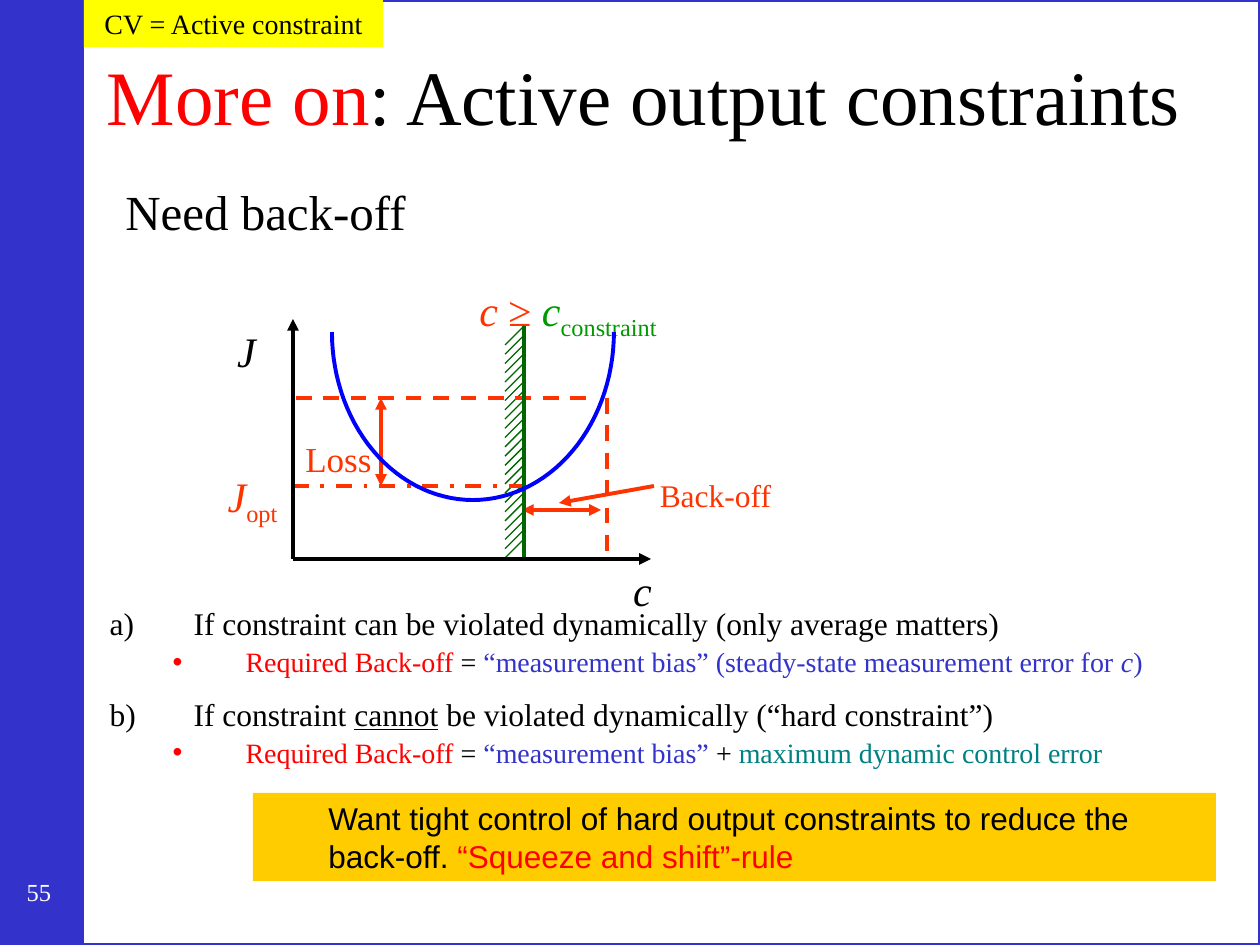
import math

import pptx
import pptx.dml.color
import pptx.enum.dml
import pptx.enum.shapes
import pptx.enum.text
import pptx.oxml.ns
import pptx.util
from lxml import etree

PX = 914400 / 126
SERIF = "Times New Roman"
ORANGE, BLACK, RED, BLUE = "FF3300", "000000", "FF0000", "3333CC"
DARK_GREEN, GREEN, TEAL, CURVE_BLUE = "006600", "009900", "008080", "0000FF"
CENTER = pptx.enum.text.PP_ALIGN.CENTER
LEFT = pptx.enum.text.PP_ALIGN.LEFT
DASH = pptx.enum.dml.MSO_LINE.DASH
DASH_DOT = pptx.enum.dml.MSO_LINE.DASH_DOT

# A run is (text, colour, style): i italic, u underlined, s subscript.
TITLE = [("More on", RED, ""), (": Active output constraints", BLACK, "")]
SUBTITLE = [("Need back-off", BLACK, "")]
CASES = [  # level, space before in points, runs
    (0, 0, [("If constraint can be violated dynamically (only average matters)", BLACK, "")]),
    (1, 3.5, [("Required Back-off", RED, ""), (" = ", BLACK, ""),
              ("“measurement bias” (steady-state measurement error for ", BLUE, ""),
              ("c", BLUE, "i"), (")", BLUE, "")]),
    (0, 11.5, [("If constraint ", BLACK, ""), ("cannot", BLACK, "u"),
               (" be violated dynamically (“hard constraint”)", BLACK, "")]),
    (1, 3.5, [("Required Back-off", RED, ""), (" = ", BLACK, ""),
              ("“measurement bias”", BLUE, ""), (" + ", BLACK, ""),
              ("maximum dynamic control error", TEAL, "")]),
]
CASE_FORMATS = [  # per level
    dict(size=18, left=84, indent=-84, bullet=("a:buAutoNum", "type", "alphaLcParenR")),
    dict(size=16, left=136, indent=-73, bullet=("a:buChar", "char", "•")),
]
RULE = [("Want tight control of hard output constraints to reduce the back-off. ", BLACK, ""),
        ("“Squeeze and shift”-rule", RED, "")]
TAG = [("CV = Active constraint", BLACK, "")]
LABELS = [  # box, size, runs
    ((10, 871, 58, 53), 14, [("55", "FFFFFF", "")]),
    ((174, 464, 157, 63), 24, [("J", ORANGE, "i"), ("opt", ORANGE, "s")]),
    ((626, 470, 179, 50), 18, [("Back-off", ORANGE, "")]),
    ((249, 431, 179, 54), 20, [("Loss", ORANGE, "")]),
    ((427, 278, 282, 63), 24, [("c ", ORANGE, "i"), ("≥ ", ORANGE, ""),
                               ("c", GREEN, "i"), ("constraint", GREEN, "s")]),
    ((614, 558, 57, 63), 24, [("c", BLACK, "i")]),
    ((218, 319, 57, 63), 24, [("J", BLACK, "i")]),
]

# Diagram coordinates
ORIGIN_X, ORIGIN_Y = 293, 559
CONSTRAINT_X, CONSTRAINT_TOP = 524, 326
LOSS_Y, OPTIMUM_Y = 398, 486
HATCH_COUNT, HATCH_SIZE = 24, 19
CURVE_X, CURVE_Y, CURVE_WIDTH, CURVE_HEIGHT = 473, 332, 141, 168
LINES = [  # ends, colour, format
    ((607, LOSS_Y, 607, 558), ORANGE, dict(dash=DASH)),
    ((296, LOSS_Y, 597, LOSS_Y), ORANGE, dict(dash=DASH)),
    ((522, 510, 601, 510), ORANGE, dict(head=True, tail=True)),
    ((CONSTRAINT_X, 558, CONSTRAINT_X, CONSTRAINT_TOP), DARK_GREEN, {}),
    ((ORIGIN_X, OPTIMUM_Y, 522, OPTIMUM_Y), ORANGE, dict(dash=DASH_DOT)),
    ((ORIGIN_X, ORIGIN_Y, ORIGIN_X, 319), BLACK, dict(tail=True)),
    ((ORIGIN_X, ORIGIN_Y, 651, ORIGIN_Y), BLACK, dict(tail=True)),
    ((381, OPTIMUM_Y, 381, LOSS_Y), ORANGE, dict(head=True, tail=True)),
    ((654, OPTIMUM_Y, 559, 503), ORANGE, dict(tail=True)),
]


def emu(px):
    return pptx.util.Emu(round(px * PX))


def rgb(value):
    return pptx.dml.color.RGBColor.from_string(value)


def add_element(parent, tag, **attributes):
    return etree.SubElement(parent, pptx.oxml.ns.qn(tag), attributes)


def write(paragraph, runs, size, font=SERIF, align=LEFT, left=0, indent=0,
          before=0, spacing=None, bullet=None):
    paragraph.alignment = align
    paragraph.space_before = pptx.util.Pt(before)
    paragraph.line_spacing = spacing
    properties = paragraph._p.get_or_add_pPr()
    properties.set("marL", str(emu(left)))
    properties.set("indent", str(emu(indent)))
    if bullet:
        tag, name, value = bullet
        add_element(properties, tag, **{name: value})
    else:
        add_element(properties, "a:buNone")
    paragraph.font.size = pptx.util.Pt(size)
    for text, colour, style in runs:
        run = paragraph.add_run()
        run.text = text
        run.font.name = font
        run.font.size = pptx.util.Pt(size)
        run.font.color.rgb = rgb(colour)
        if "i" in style:
            run.font.italic = True
        if "u" in style:
            run.font.underline = True
        if "s" in style:
            run._r.get_or_add_rPr().set("baseline", "-25000")


def place(shape, box):
    shape.left, shape.top, shape.width, shape.height = map(emu, box)


def prepare_frame(shape, anchor=pptx.enum.text.MSO_ANCHOR.TOP, wrap=True):
    frame = shape.text_frame
    frame.word_wrap = wrap
    frame.auto_size = pptx.enum.text.MSO_AUTO_SIZE.NONE
    frame.vertical_anchor = anchor
    return frame


def add_text(slide, box, runs, size, **format):
    frame = prepare_frame(slide.shapes.add_textbox(*map(emu, box)))
    write(frame.paragraphs[0], runs, size, **format)


def add_rectangle(slide, box, fill=None, line=None):
    shape = slide.shapes.add_shape(pptx.enum.shapes.MSO_SHAPE.RECTANGLE, *map(emu, box))
    shape.shadow.inherit = False
    if fill:
        shape.fill.solid()
        shape.fill.fore_color.rgb = rgb(fill)
    else:
        shape.fill.background()
    if line:
        shape.line.color.rgb = rgb(line)
        shape.line.width = pptx.util.Pt(2.25)
    else:
        shape.line.fill.background()
    return shape


def add_line(slide, ends, colour, width=2.25, dash=None, head=False, tail=False):
    line = slide.shapes.add_connector(pptx.enum.shapes.MSO_CONNECTOR.STRAIGHT, *map(emu, ends))
    line.line.color.rgb = rgb(colour)
    line.line.width = pptx.util.Pt(width)
    if dash:
        line.line.dash_style = dash
    for tag, wanted in (("a:headEnd", head), ("a:tailEnd", tail)):
        if wanted:
            add_element(line.line._get_or_add_ln(), tag, type="triangle")
    add_element(line._element.spPr, "a:effectLst")


def add_half_curve(slide, side, steps=30):
    """Draw a quarter ellipse from the minimum up to the left (-1) or right (1)."""
    angles = [math.pi / 2 * step / steps for step in range(steps + 1)]
    points = [(emu(CURVE_X + side * CURVE_WIDTH * math.sin(angle)),
               emu(CURVE_Y + CURVE_HEIGHT * math.cos(angle))) for angle in angles]
    builder = slide.shapes.build_freeform(*points[0])
    builder.add_line_segments(points[1:], close=False)
    curve = builder.convert_to_shape()
    curve.shadow.inherit = False
    curve.fill.background()
    curve.line.color.rgb = rgb(CURVE_BLUE)
    curve.line.width = pptx.util.Pt(2.25)


def main():
    presentation = pptx.Presentation()
    presentation.slide_width, presentation.slide_height = emu(1260), emu(945)
    slide = presentation.slides.add_slide(presentation.slide_layouts[1])
    title, body = slide.placeholders

    add_rectangle(slide, (0, 0, 84, 945), fill=BLUE)
    add_rectangle(slide, (0, 0, 1260, 945), line=BLUE)

    place(title, (94, 45, 1166, 100))
    frame = prepare_frame(title, pptx.enum.text.MSO_ANCHOR.MIDDLE)
    write(frame.paragraphs[0], TITLE, 44)
    add_text(slide, (113, 175, 1101, 160), SUBTITLE, 28)

    place(body, (97, 602, 1163, 252))
    frame = prepare_frame(body)
    for index, (level, before, runs) in enumerate(CASES):
        paragraph = frame.add_paragraph() if index else frame.paragraphs[0]
        paragraph.level = level
        write(paragraph, runs, before=before, spacing=0.9, **CASE_FORMATS[level])

    for box, size, runs in LABELS:
        add_text(slide, box, runs, size, align=CENTER)
    hatch_step = (558 - HATCH_SIZE - CONSTRAINT_TOP) / (HATCH_COUNT - 1)
    for index in range(HATCH_COUNT):
        top = CONSTRAINT_TOP + index * hatch_step
        add_line(slide, (CONSTRAINT_X, top, CONSTRAINT_X - HATCH_SIZE, top + HATCH_SIZE),
                 DARK_GREEN, width=0.75)
    for ends, colour, format in LINES:
        add_line(slide, ends, colour, **format)
    for side in (1, -1):
        add_half_curve(slide, side)

    frame = prepare_frame(add_rectangle(slide, (253, 793, 963, 88), fill="FFCC00"))
    write(frame.paragraphs[0], RULE, 18, font="Arial", left=63)
    frame = prepare_frame(add_rectangle(slide, (84, 0, 299, 47), fill="FFFF00"), wrap=False)
    write(frame.paragraphs[0], TAG, 16, align=CENTER)

    presentation.save("out.pptx")


if __name__ == "__main__":
    main()
